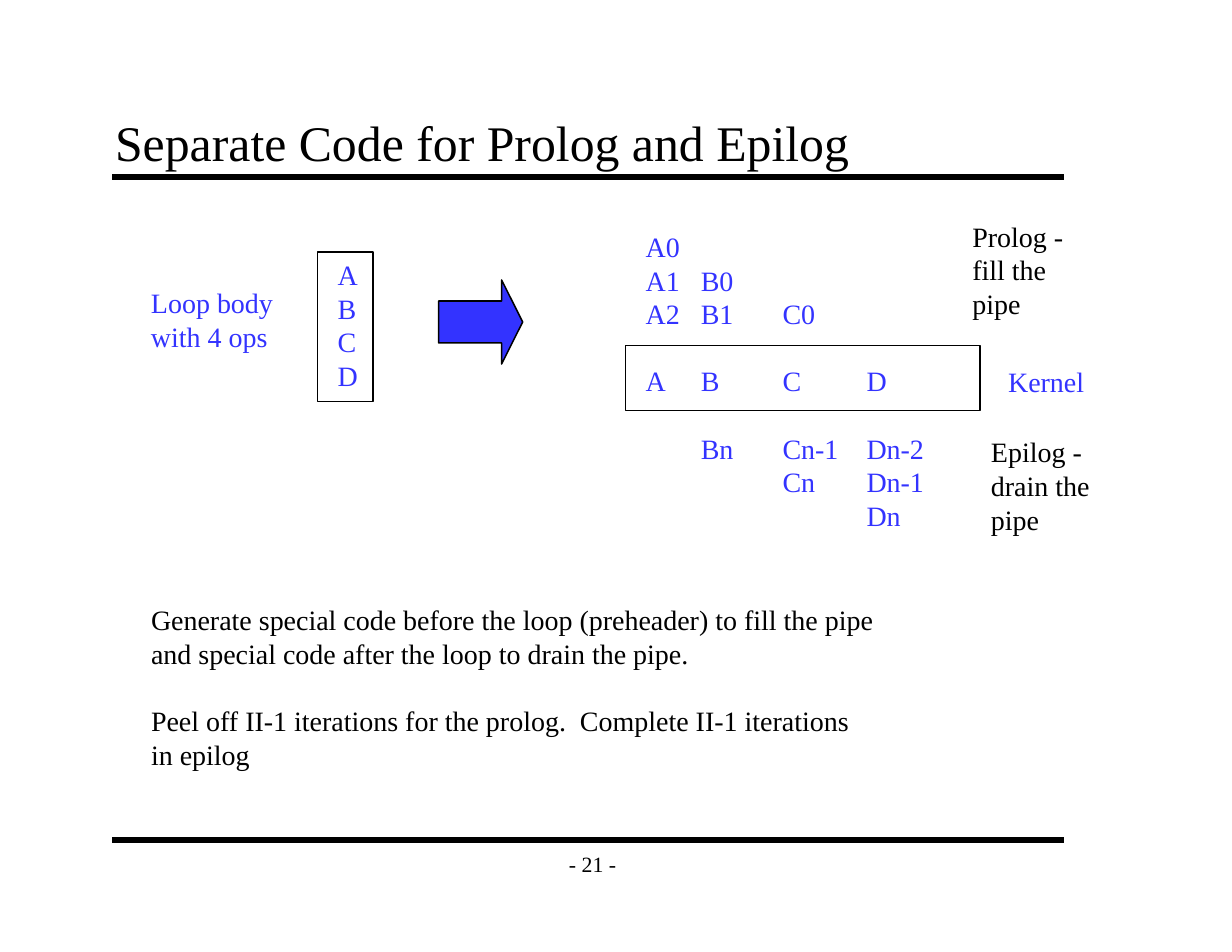
from lxml.etree import SubElement
from pptx import Presentation
from pptx.dml.color import RGBColor
from pptx.enum.shapes import MSO_CONNECTOR, MSO_SHAPE
from pptx.enum.text import MSO_ANCHOR, PP_ALIGN
from pptx.oxml.ns import qn
from pptx.util import Pt

COLORS = {"ink": "000000", "blue": "3333FF"}
FONT = "Times New Roman"
BODY_SIZE = 18
LINE_HEIGHT = 21.6
COLUMN_STOPS = (35.5, 88, 142)
LOOP_OPS = ("A", "B", "C", "D")
SCHEDULE = (
    ("A0",),
    ("A1", "B0"),
    ("A2", "B1", "C0"),
    LOOP_OPS,
    ("", "Bn", "Cn-1", "Dn-2"),
    ("", "", "Cn", "Dn-1"),
    ("", "", "", "Dn"),
)
NOTES = (
    "Generate special code before the loop (preheader) to fill the pipe",
    "and special code after the loop to drain the pipe.",
    "Peel off II-1 iterations for the prolog.  Complete II-1 iterations",
    "in epilog",
)


def color(name):
    return RGBColor.from_string(COLORS[name])


def add_text(slide, box, lines, color_name="ink", size=BODY_SIZE, wrap=False, gaps=()):
    shape = slide.shapes.add_textbox(*map(Pt, box))
    text_frame = shape.text_frame
    text_frame.word_wrap = wrap
    text_frame.text = "\n".join(lines)
    for index, paragraph in enumerate(text_frame.paragraphs):
        if size == BODY_SIZE:
            paragraph.line_spacing = Pt(LINE_HEIGHT)
        if index in gaps:
            paragraph.space_before = Pt(LINE_HEIGHT)
        for run in paragraph.runs:
            run.font.name = FONT
            run.font.size = Pt(size)
            run.font.color.rgb = color(color_name)
    return text_frame


def set_margins(text_frame, horizontal, vertical):
    text_frame.margin_left = text_frame.margin_right = Pt(horizontal)
    text_frame.margin_top = text_frame.margin_bottom = Pt(vertical)


def add_outlined(slide, preset, box, fill=None):
    shape = slide.shapes.add_shape(preset, *map(Pt, box))
    shape.shadow.inherit = False
    if fill:
        shape.fill.solid()
        shape.fill.fore_color.rgb = color(fill)
    else:
        shape.fill.background()
    shape.line.color.rgb = color("ink")
    shape.line.width = Pt(1)
    return shape


def add_rule(slide, left, top, width):
    rule = slide.shapes.add_connector(
        MSO_CONNECTOR.STRAIGHT, Pt(left), Pt(top), Pt(left + width), Pt(top)
    )
    rule.line.color.rgb = color("ink")
    rule.line.width = Pt(4)
    SubElement(rule._element.spPr, qn("a:effectLst"))


def add_title(slide, box):
    left, top, width, height = box
    add_rule(slide, left + 6, top + height, width)
    text_frame = add_text(
        slide, box, ["Separate Code for Prolog and Epilog"], size=32, wrap=True
    )
    text_frame.vertical_anchor = MSO_ANCHOR.BOTTOM
    set_margins(text_frame, 8, 4)


def add_footer(slide, box):
    left, top, width, height = box
    add_rule(slide, left, top, width)
    text_frame = add_text(slide, (left + 282, top, 54, height), ["- 21 -"], size=14)
    text_frame.vertical_anchor = MSO_ANCHOR.MIDDLE
    set_margins(text_frame, 8, 4)
    text_frame.paragraphs[0].alignment = PP_ALIGN.CENTER


def add_loop_body(slide, box):
    left, top, width, height = box
    add_text(slide, (left, top + 18, 94, 50), ["Loop body", "with 4 ops"], "blue")
    add_text(slide, (left + 120, top, 28, 93.5), LOOP_OPS, "blue")
    add_outlined(slide, MSO_SHAPE.RECTANGLE, (left + width - 36, top, 36, height))


def add_arrow(slide, box):
    arrow = add_outlined(slide, MSO_SHAPE.RIGHT_ARROW, box, "blue")
    arrow.adjustments[0] = 0.5
    arrow.adjustments[1] = 0.25


def add_schedule(slide, box):
    left, top, width, height = box
    rows = ["\t".join(row) for row in SCHEDULE]
    text_frame = add_text(slide, box, rows, "blue", wrap=True, gaps=(3, 4))
    for paragraph in text_frame.paragraphs:
        tab_list = SubElement(paragraph._p.get_or_add_pPr(), qn("a:tabLst"))
        for stop in COLUMN_STOPS:
            SubElement(tab_list, qn("a:tab"), pos=str(Pt(stop)), algn="l")
    add_outlined(slide, MSO_SHAPE.RECTANGLE, (left - 6, top + 78, 228, 42))


def add_stage_labels(slide, box):
    left, top, width, height = box
    add_text(slide, (left, top, 74, 72), ["Prolog -", "fill the", "pipe"])
    add_text(slide, (left + 23, top + 93.5, 66, 29), ["Kernel"], "blue")
    add_text(slide, (left + 12, top + 138.5, 80, 72), ["Epilog -", "drain the", "pipe"])


def add_notes(slide, box):
    add_text(slide, box, NOTES, gaps=(2,))


def main():
    presentation = Presentation()
    presentation.slide_width = Pt(792)
    presentation.slide_height = Pt(612)
    slide = presentation.slides.add_slide(presentation.slide_layouts[6])
    add_title(slide, (66, 66, 612, 48))
    add_loop_body(slide, (90, 162, 150, 96))
    add_arrow(slide, (282, 180, 54, 54))
    add_schedule(slide, (408, 144, 193.5, 201.5))
    add_stage_labels(slide, (618, 137.5, 92, 210.5))
    add_notes(slide, (90, 384, 486, 115))
    add_footer(slide, (72, 540, 612, 30))
    presentation.save("out.pptx")


if __name__ == "__main__":
    main()
